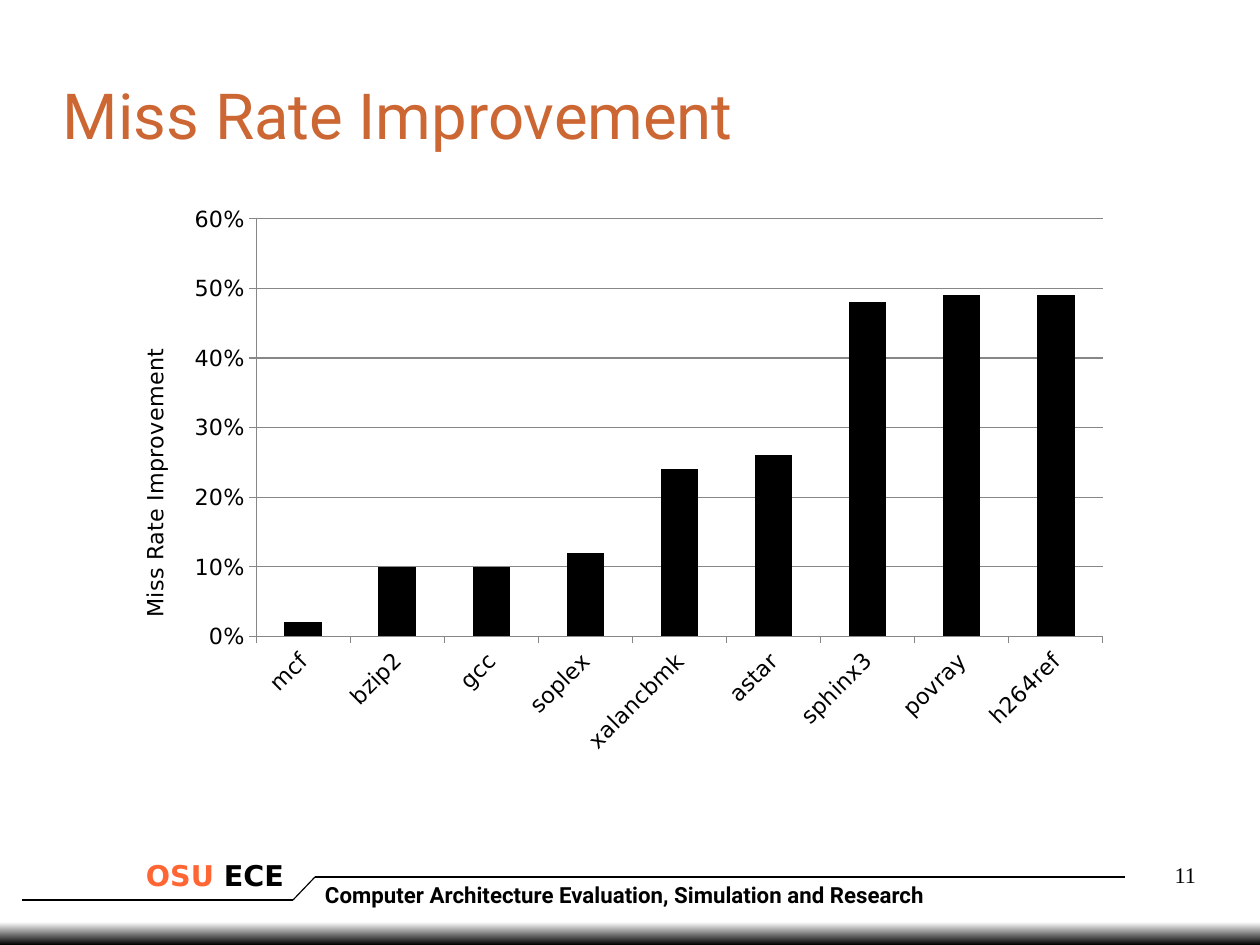
from lxml import etree
from pptx import Presentation
from pptx.chart.data import CategoryChartData
from pptx.dml.color import RGBColor
from pptx.enum.chart import XL_CHART_TYPE, XL_TICK_MARK
from pptx.enum.shapes import MSO_CONNECTOR, MSO_SHAPE
from pptx.enum.text import MSO_ANCHOR, MSO_AUTO_SIZE, PP_ALIGN
from pptx.oxml.ns import qn
from pptx.util import Pt

COLUMNS = XL_CHART_TYPE.COLUMN_CLUSTERED
TICK_OUT, TICK_NONE = XL_TICK_MARK.OUTSIDE, XL_TICK_MARK.NONE
STRAIGHT, RECTANGLE = MSO_CONNECTOR.STRAIGHT, MSO_SHAPE.RECTANGLE
MIDDLE, NO_AUTOFIT = MSO_ANCHOR.MIDDLE, MSO_AUTO_SIZE.NONE
LEFT, RIGHT = PP_ALIGN.LEFT, PP_ALIGN.RIGHT

PX = 8000  # EMU in one px: the page is 28 by 21 cm
WIDTH, HEIGHT = 1260, 945
COLORS = {"title": "CC6633", "accent": "FF6633", "ink": "000000",
          "paper": "FFFFFF", "grid": "878787"}
MISS_RATES = {"mcf": 0.02, "bzip2": 0.10, "gcc": 0.10, "soplex": 0.12,
              "xalancbmk": 0.24, "astar": 0.26, "sphinx3": 0.48,
              "povray": 0.49, "h264ref": 0.49}


def color(name):
    return RGBColor.from_string(COLORS[name])


def emu(*lengths):
    return [length * PX for length in lengths]


def style(font, size, face, ink="ink", bold=False):
    font.size, font.name, font.bold = Pt(size), face, bold
    font.color.rgb = color(ink)


def fill_frame(frame, spans, size, face, bold=False, spacing=0.98,
               align=LEFT, inset=(11, 6), wrap=True):
    """Write one paragraph from (text, colour) spans."""
    frame.auto_size, frame.word_wrap = NO_AUTOFIT, wrap
    frame.margin_left = frame.margin_right = inset[0] * PX
    frame.margin_top = frame.margin_bottom = inset[1] * PX
    para = frame.paragraphs[0]
    para.alignment, para.line_spacing = align, spacing
    for text, ink in spans:
        span = para.add_run()
        span.text = text
        style(span.font, size, face, ink, bold)


def add_title(page, box):
    title = page.shapes.title
    title.left, title.top, title.width, title.height = emu(*box)
    title.text_frame.vertical_anchor = MIDDLE
    fill_frame(title.text_frame, [("Miss Rate Improvement", "title")], 40,
               "Roboto", spacing=0.97, inset=(0, 0))


def place(element, **fractions):
    """Fix a chart part's position as fractions of the chart area."""
    layout = element.find(qn("c:layout"))
    if layout is None:
        layout = etree.Element(qn("c:layout"))
        text = element.find(qn("c:tx"))
        element.insert(0 if text is None else 1, layout)
    for child in list(layout):
        layout.remove(child)
    manual = etree.SubElement(layout, qn("c:manualLayout"))
    if "w" in fractions:
        etree.SubElement(manual, qn("c:layoutTarget")).set("val", "inner")
    for side in ("xMode", "yMode"):
        etree.SubElement(manual, qn("c:" + side)).set("val", "edge")
    for key, value in fractions.items():
        etree.SubElement(manual, qn("c:" + key)).set("val", str(value))


def rotate_text(element, degrees):
    body = next(element.iter(qn("a:bodyPr")))
    body.set("rot", str(degrees * 60000))
    body.set("vert", "horz")


def add_miss_rate_chart(page, box):
    data = CategoryChartData(number_format="0%")
    data.categories = list(MISS_RATES)
    data.add_series("Series 1", list(MISS_RATES.values()))
    chart = page.shapes.add_chart(COLUMNS, *emu(*box), data).chart
    chart.has_legend = chart.has_title = False
    style(chart.font, 14, "DejaVu Sans")

    plot = chart.plots[0]
    plot.gap_width, plot.vary_by_categories = 150, False
    bars = plot.series[0].format.fill
    bars.solid()
    bars.fore_color.rgb = color("ink")

    names, rates = chart.category_axis, chart.value_axis
    for axis in (names, rates):
        axis.major_tick_mark, axis.minor_tick_mark = TICK_OUT, TICK_NONE
        style(axis.tick_labels.font, 14, "DejaVu Sans")
        axis.format.line.color.rgb = color("grid")
        axis.format.line.width = Pt(0.75)
    rotate_text(names._element, -45)

    rates.minimum_scale, rates.maximum_scale, rates.major_unit = 0, 0.6, 0.1
    rates.tick_labels.number_format = "0%"
    rates.tick_labels.number_format_is_linked = False
    rates.has_major_gridlines = True
    rates.major_gridlines.format.line.color.rgb = color("grid")
    rates.major_gridlines.format.line.width = Pt(0.75)

    caption = rates.axis_title
    caption.text_frame.text = "Miss Rate Improvement"
    style(caption.text_frame.paragraphs[0].runs[0].font, 14, "DejaVu Sans")
    rotate_text(caption._element, -90)
    place(caption._element, x=0.02, y=0.26)
    plot_area = next(chart._chartSpace.iter(qn("c:plotArea")))
    place(plot_area, x=0.14, y=0.04, w=0.84, h=0.73)


def add_text(page, box, spans, size, face, **options):
    frame = page.shapes.add_textbox(*emu(*box)).text_frame
    fill_frame(frame, spans, size, face, **options)


def add_footer(page, box):
    left, top, width, height = box
    band_height = 23
    band = page.shapes.add_shape(
        RECTANGLE, *emu(left, top + height - band_height, width, band_height))
    band.shadow.inherit = False
    band.line.fill.background()
    band.fill.gradient()
    band.fill.gradient_angle = 270
    for stop, name in zip(band.fill.gradient_stops, ("paper", "ink")):
        stop.color.rgb = color(name)

    add_text(page, (left + 314, top + 23, 780, 38),
             [("Computer Architecture Evaluation, Simulation and Research", "ink")],
             14, "Roboto", bold=True, wrap=False)

    corners = [(22, 46), (293, 46), (315, 23), (1125, 23)]
    for (x1, y1), (x2, y2) in zip(corners, corners[1:]):
        rule = page.shapes.add_connector(
            STRAIGHT, *emu(left + x1, top + y1, left + x2, top + y2))
        rule.line.color.rgb = color("ink")
        rule.line.width = Pt(0.75)
        etree.SubElement(rule._element.spPr, qn("a:effectLst"))

    add_text(page, (left + 135, top, 179, 45),
             [("OSU", "accent"), (" ECE", "ink")], 18, "DejaVu Sans", bold=True)
    add_text(page, (left + 902, top + 7, 294, 65), [("11", "ink")], 14,
             "Times New Roman", spacing=1.02, align=RIGHT, inset=(0, 0))


def main():
    deck = Presentation()
    deck.slide_width, deck.slide_height = emu(WIDTH, HEIGHT)
    page = deck.slides.add_slide(deck.slide_layouts[5])
    page.background.fill.solid()
    page.background.fill.fore_color.rgb = color("paper")
    add_footer(page, (0, 854, WIDTH, HEIGHT - 854))
    add_title(page, (63, 38, 1134, 158))
    add_miss_rate_chart(page, (115, 196, 1008, 572))
    deck.save("out.pptx")


if __name__ == "__main__":
    main()
